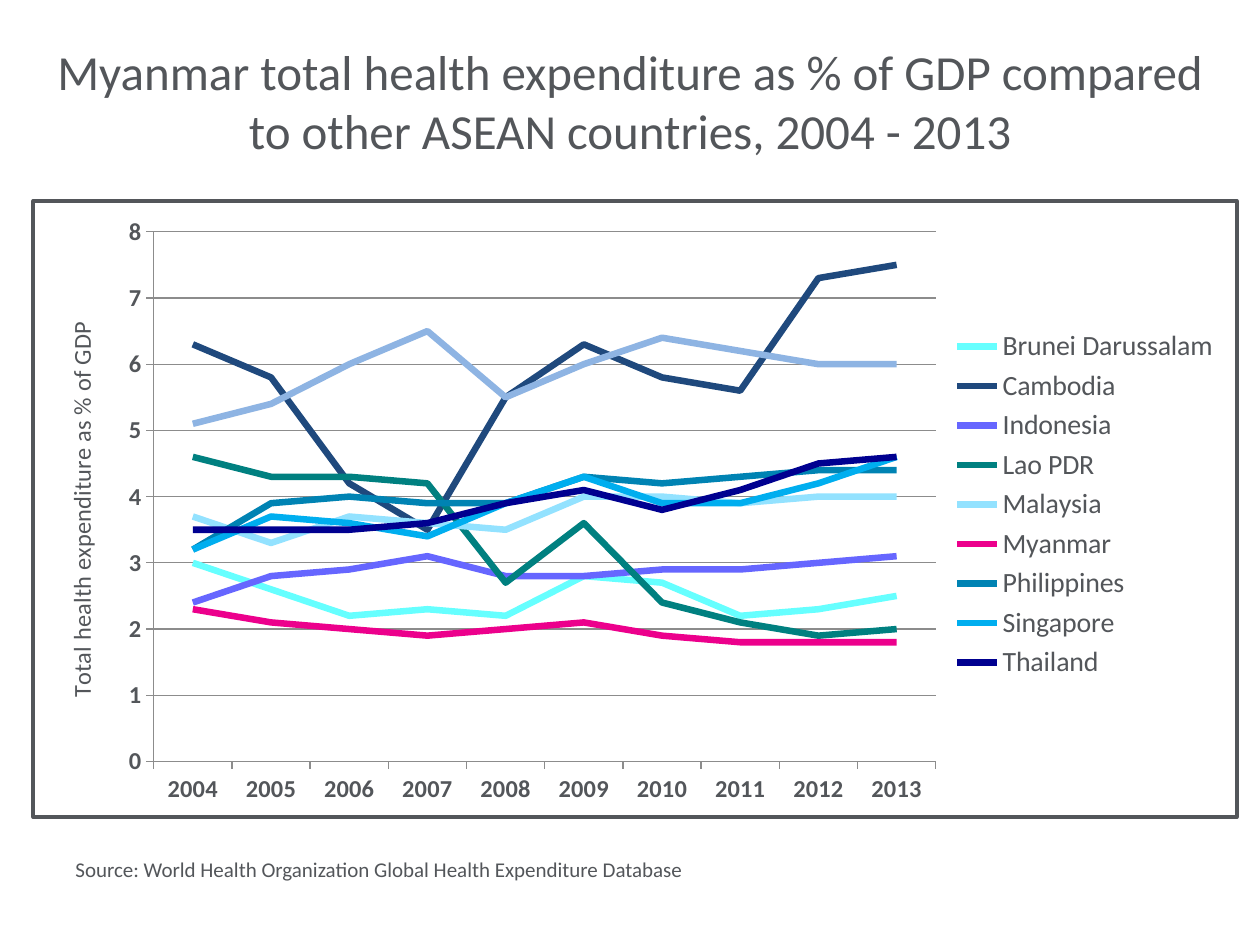
import pptx
import pptx.chart.data
import pptx.dml.color
import pptx.enum.chart
import pptx.enum.text
import pptx.oxml
import pptx.oxml.ns
import pptx.util

TITLE = "Myanmar total health expenditure as % of GDP compared to other ASEAN countries, 2004 - 2013"
SOURCE = "Source: World Health Organization Global Health Expenditure Database"
AXIS_TITLE = "Total health expenditure as % of GDP"
FONT, INK, GRID = "Calibri", "53565A", "8C8C8C"
YEARS = [str(year) for year in range(2004, 2014)]
COUNTRIES = [
    ("Brunei Darussalam", "66FFFF", (3, 2.6, 2.2, 2.3, 2.2, 2.8, 2.7, 2.2, 2.3, 2.5)),
    ("Cambodia", "1F497D", (6.3, 5.8, 4.2, 3.5, 5.5, 6.3, 5.8, 5.6, 7.3, 7.5)),
    ("Indonesia", "6666FF", (2.4, 2.8, 2.9, 3.1, 2.8, 2.8, 2.9, 2.9, 3, 3.1)),
    ("Lao PDR", "008080", (4.6, 4.3, 4.3, 4.2, 2.7, 3.6, 2.4, 2.1, 1.9, 2)),
    ("Malaysia", "93E2FF", (3.7, 3.3, 3.7, 3.6, 3.5, 4, 4, 3.9, 4, 4)),
    ("Myanmar", "EC008C", (2.3, 2.1, 2, 1.9, 2, 2.1, 1.9, 1.8, 1.8, 1.8)),
    ("Philippines", "0083B3", (3.2, 3.9, 4, 3.9, 3.9, 4.3, 4.2, 4.3, 4.4, 4.4)),
    ("Singapore", "00AEEF", (3.2, 3.7, 3.6, 3.4, 3.9, 4.3, 3.9, 3.9, 4.2, 4.6)),
    ("Thailand", "000090", (3.5, 3.5, 3.5, 3.6, 3.9, 4.1, 3.8, 4.1, 4.5, 4.6)),
    ("Viet Nam", "8EB4E3", (5.1, 5.4, 6, 6.5, 5.5, 6, 6.4, 6.2, 6, 6)),
]
UNLISTED = "Viet Nam"


def color(value):
    return pptx.dml.color.RGBColor.from_string(value)


def inches(*lengths):
    return [pptx.util.Inches(length) for length in lengths]


def style_font(font, size, bold=False):
    font.name, font.size, font.bold = FONT, pptx.util.Pt(size), bold
    font.color.rgb = color(INK)


def style_line(line, value, width):
    line.color.rgb = color(value)
    line.width = pptx.util.Pt(width)


def element(xml):
    namespaces = pptx.oxml.ns.nsdecls("c", "a")
    return pptx.oxml.parse_xml(xml.replace(">", f" {namespaces}>", 1))


def layout(**shares):
    target = '<c:layoutTarget val="inner"/>' if "w" in shares else ""
    modes = "".join(f'<c:{key}Mode val="edge"/>' for key in "xy")
    values = "".join(f'<c:{key} val="{share}"/>' for key, share in shares.items())
    return element(f"<c:layout><c:manualLayout>{target}{modes}{values}</c:manualLayout></c:layout>")


def fill_text(shape, text, size):
    shape.text_frame.text = text
    shape.text_frame.word_wrap = True
    style_font(shape.text_frame.paragraphs[0].runs[0].font, size)


def add_title(slide):
    title = slide.shapes.title
    title.left, title.top, title.width, title.height = inches(0.25, 0.17, 9.5, 1.25)
    fill_text(title, TITLE, 28)
    title.text_frame.vertical_anchor = pptx.enum.text.MSO_ANCHOR.MIDDLE
    title.text_frame.paragraphs[0].alignment = pptx.enum.text.PP_ALIGN.CENTER


def style_axes(chart):
    for axis in (chart.category_axis, chart.value_axis):
        style_font(axis.tick_labels.font, 14, True)
        style_line(axis.format.line, GRID, 0.75)
        axis.major_tick_mark = pptx.enum.chart.XL_TICK_MARK.OUTSIDE
    axis = chart.value_axis
    axis.minimum_scale, axis.maximum_scale, axis.major_unit = 0, 8, 1
    axis.tick_labels.number_format = "#,##0"
    axis.tick_labels.number_format_is_linked = False
    style_line(axis.major_gridlines.format.line, GRID, 0.75)
    axis.axis_title.text_frame.text = AXIS_TITLE
    style_font(axis.axis_title.text_frame.paragraphs[0].runs[0].font, 14)
    body = axis.axis_title._element.xpath(".//a:bodyPr")[0]
    body.set("rot", "-5400000")
    body.set("vert", "horz")


def style_legend(chart):
    chart.has_legend = True
    legend = chart.legend
    legend.position = pptx.enum.chart.XL_LEGEND_POSITION.RIGHT
    legend.include_in_layout = False
    style_font(legend.font, 16)
    for old in legend._element.xpath("c:layout"):
        legend._element.remove(old)
    index = [name for name, _, _ in COUNTRIES].index(UNLISTED)
    entry = element(f'<c:legendEntry><c:idx val="{index}"/><c:delete val="1"/></c:legendEntry>')
    position = legend._element.xpath("c:legendPos")[0]
    position.addnext(entry)
    entry.addnext(layout(x=0.76, y=0.2))


def add_chart(slide):
    data = pptx.chart.data.CategoryChartData()
    data.categories = YEARS
    for name, _, values in COUNTRIES:
        data.add_series(name, values)
    chart = slide.shapes.add_chart(
        pptx.enum.chart.XL_CHART_TYPE.LINE, *inches(0.25, 1.58, 9.58, 4.92), data
    ).chart
    chart.has_title = False
    style_font(chart.font, 10)
    chart.plots[0].vary_by_categories = False
    for series, (_, value, _) in zip(chart.plots[0].series, COUNTRIES):
        series.smooth = False
        series.marker.style = pptx.enum.chart.XL_MARKER_STYLE.NONE
        style_line(series.format.line, value, 3.75)
    style_axes(chart)
    style_legend(chart)
    plot_area = chart._chartSpace.xpath("c:chart/c:plotArea")[0]
    for old in plot_area.xpath("c:layout"):
        plot_area.remove(old)
    plot_area.insert(0, layout(x=0.1, y=0.05, w=0.65, h=0.86))
    border = element(
        f'<c:spPr><a:noFill/><a:ln w="{pptx.util.Pt(2.25)}"><a:solidFill>'
        f'<a:srgbClr val="{INK}"/></a:solidFill><a:round/></a:ln></c:spPr>'
    )
    chart._chartSpace.xpath("c:txPr")[0].addprevious(border)


def main():
    presentation = pptx.Presentation()
    presentation.slide_width, presentation.slide_height = inches(10, 7.5)
    slide = presentation.slides.add_slide(presentation.slide_layouts[5])
    add_title(slide)
    add_chart(slide)
    source = slide.shapes.add_textbox(*inches(0.5, 6.75, 5.08, 0.3))
    fill_text(source, SOURCE, 12)
    presentation.save("out.pptx")


if __name__ == "__main__":
    main()
